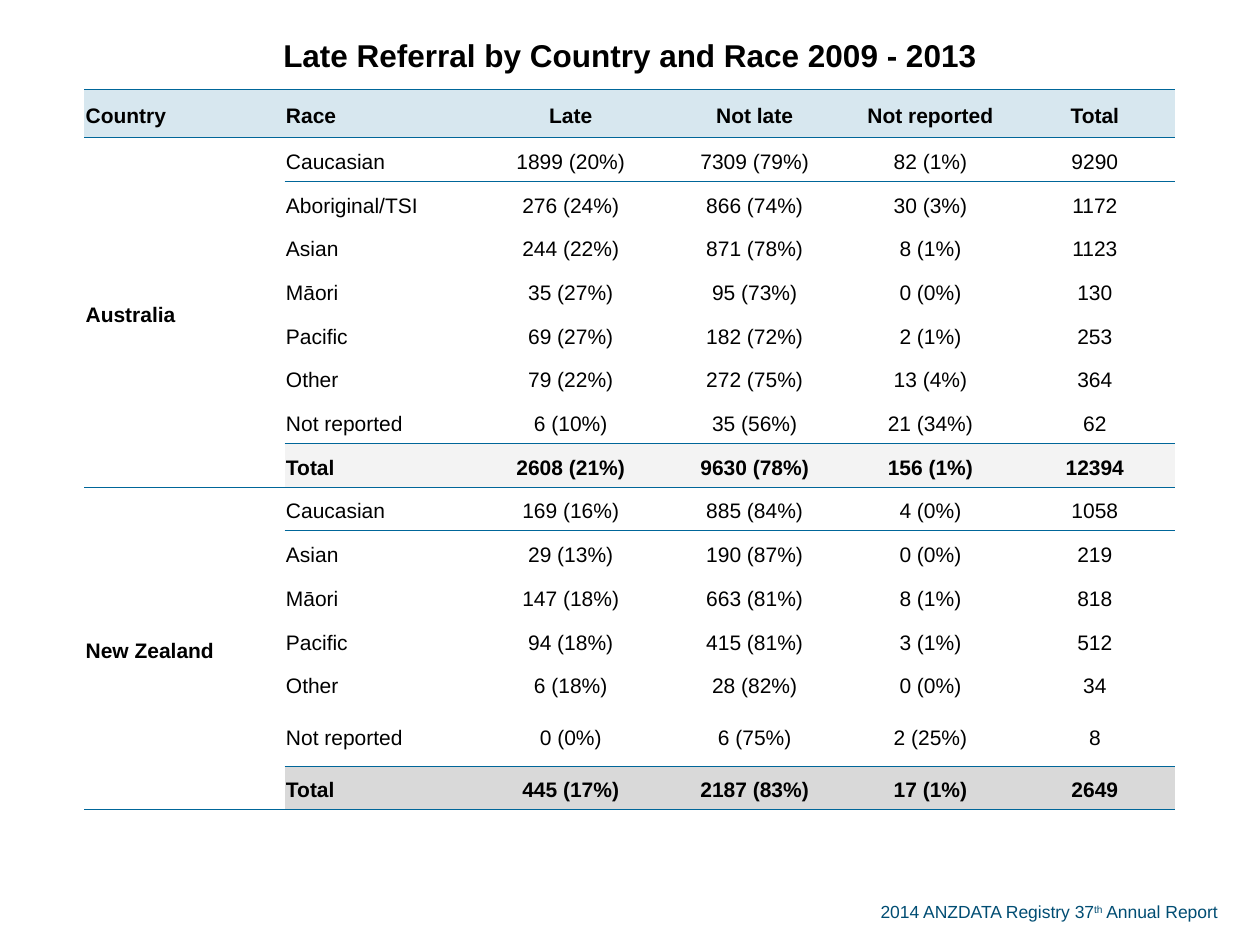
from lxml import etree
from pptx import Presentation
from pptx.dml.color import RGBColor
from pptx.enum import text
from pptx.oxml import ns
from pptx.util import Inches, Pt

# Content
TITLE = "Late Referral by Country and Race 2009 - 2013"
HEADINGS = ["Country", "Race", "Late", "Not late", "Not reported", "Total"]
COUNTRIES = {
    "Australia": [
        ("Caucasian", "1899 (20%)", "7309 (79%)", "82 (1%)", "9290"),
        ("Aboriginal/TSI", "276 (24%)", "866 (74%)", "30 (3%)", "1172"),
        ("Asian", "244 (22%)", "871 (78%)", "8 (1%)", "1123"),
        ("Māori", "35 (27%)", "95 (73%)", "0 (0%)", "130"),
        ("Pacific", "69 (27%)", "182 (72%)", "2 (1%)", "253"),
        ("Other", "79 (22%)", "272 (75%)", "13 (4%)", "364"),
        ("Not reported", "6 (10%)", "35 (56%)", "21 (34%)", "62"),
        ("Total", "2608 (21%)", "9630 (78%)", "156 (1%)", "12394"),
    ],
    "New Zealand": [
        ("Caucasian", "169 (16%)", "885 (84%)", "4 (0%)", "1058"),
        ("Asian", "29 (13%)", "190 (87%)", "0 (0%)", "219"),
        ("Māori", "147 (18%)", "663 (81%)", "8 (1%)", "818"),
        ("Pacific", "94 (18%)", "415 (81%)", "3 (1%)", "512"),
        ("Other", "6 (18%)", "28 (82%)", "0 (0%)", "34"),
        ("Not reported", "0 (0%)", "6 (75%)", "2 (25%)", "8"),
        ("Total", "445 (17%)", "2187 (83%)", "17 (1%)", "2649"),
    ],
}
FOOTER = [("2014 ANZDATA Registry 37", False), ("th", True), (" Annual Report", False)]

# Format
FONT = "Arial"
BLACK = RGBColor(0x00, 0x00, 0x00)
FOOTER_BLUE = RGBColor(0x00, 0x4D, 0x73)
RULE_BLUE = RGBColor(0x00, 0x66, 0x99)
HEADING_FILL = RGBColor(0xD7, 0xE7, 0xEF)
TOTAL_FILLS = {"Australia": RGBColor(0xF3, 0xF3, 0xF3),
               "New Zealand": RGBColor(0xD9, 0xD9, 0xD9)}
PLAIN_STYLE = "{2D5ABB26-0587-4C30-8999-92F81FD0307C}"
COLUMN_WIDTHS = [1.59, 1.54, 1.46, 1.46, 1.33, 1.28]
TABLE_HEIGHT = 6.3
CELL_FORMAT = {"margin_left": Inches(0.01), "margin_right": Inches(0.01),
               "margin_top": Inches(0.01), "margin_bottom": 0,
               "vertical_anchor": text.MSO_ANCHOR.MIDDLE}


def apply(target, values):
    for name, value in values.items():
        setattr(target, name, value)


def write_cell(cell, words, size=12, bold=False, centred=False):
    paragraph = cell.text_frame.paragraphs[0]
    apply(paragraph, {"line_spacing": 1.19, "space_after": Pt(14),
                      "alignment": text.PP_ALIGN.CENTER if centred else text.PP_ALIGN.LEFT})
    run = paragraph.add_run()
    run.text = words
    apply(run.font, {"name": FONT, "size": Pt(size), "bold": bold})
    run.font.color.rgb = BLACK


def add_rule(cell, side):
    line = etree.SubElement(cell._tc.get_or_add_tcPr(), ns.qn(f"a:ln{side}"), w=str(Pt(0.5)))
    fill = etree.SubElement(line, ns.qn("a:solidFill"))
    etree.SubElement(fill, ns.qn("a:srgbClr"), val=str(RULE_BLUE))


def fill_cell(cell, colour):
    cell.fill.solid()
    cell.fill.fore_color.rgb = colour


prs = Presentation()
prs.slide_width, prs.slide_height = Inches(10), Inches(7.5)
slide = prs.slides.add_slide(prs.slide_layouts[6])

# Table grid: the special rows are fixed, the others share the rest
row_count = 2 + sum(len(races) for races in COUNTRIES.values())
special_heights = {0: 0.58, 1: 0.38, row_count - 2: 0.48}
plain_height = (TABLE_HEIGHT - sum(special_heights.values())) / (row_count - len(special_heights))
frame = slide.shapes.add_table(row_count, len(HEADINGS), Inches(0.67), Inches(0.13),
                               Inches(sum(COLUMN_WIDTHS)), Inches(TABLE_HEIGHT))
table = frame.table
apply(table, {"first_row": False, "horz_banding": False})
table._tbl.tblPr.find(ns.qn("a:tableStyleId")).text = PLAIN_STYLE
for column, width in zip(table.columns, COLUMN_WIDTHS):
    column.width = Inches(width)
for index, row in enumerate(table.rows):
    row.height = Inches(special_heights.get(index, plain_height))

# Country blocks: first row, last row
blocks, first = {}, 2
for country, races in COUNTRIES.items():
    blocks[country] = (first, first + len(races) - 1)
    first += len(races)

# Rules below the title, the headings, and around each total
block_ends = [last for _, last in blocks.values()]
full_rules = {0, 1, *block_ends}
total_rules = {last - 1 for last in block_ends}
for r in range(row_count):
    for c in range(len(HEADINGS)):
        cell = table.cell(r, c)
        apply(cell, CELL_FORMAT)
        ruled = full_rules | total_rules if c else full_rules
        if r - 1 in ruled:
            add_rule(cell, "T")
        if r in ruled or (c == 0 and r in [start for start, _ in blocks.values()]):
            add_rule(cell, "B")

# Title and heading rows
table.cell(0, 0).merge(table.cell(0, len(HEADINGS) - 1))
write_cell(table.cell(0, 0), TITLE, size=18, bold=True, centred=True)
for c, heading in enumerate(HEADINGS):
    write_cell(table.cell(1, c), heading, bold=True, centred=c > 1)
    fill_cell(table.cell(1, c), HEADING_FILL)

# Country rows
for country, (start, last) in blocks.items():
    table.cell(start, 0).merge(table.cell(last, 0))
    write_cell(table.cell(start, 0), country, bold=True)
    for r, values in enumerate(COUNTRIES[country], start):
        for c, value in enumerate(values, 1):
            write_cell(table.cell(r, c), value, bold=r == last, centred=c > 1)
            if r == last:
                fill_cell(table.cell(r, c), TOTAL_FILLS[country])

# Footer
footer = slide.shapes.add_textbox(Inches(6.89), Inches(7.1), Inches(2.99), Inches(0.27))
footer.text_frame.word_wrap = False
for words, raised in FOOTER:
    run = footer.text_frame.paragraphs[0].add_run()
    run.text = words
    apply(run.font, {"name": FONT, "size": Pt(10)})
    run.font.color.rgb = FOOTER_BLUE
    if raised:
        run.font._element.set("baseline", "30000")

prs.save("out.pptx")
